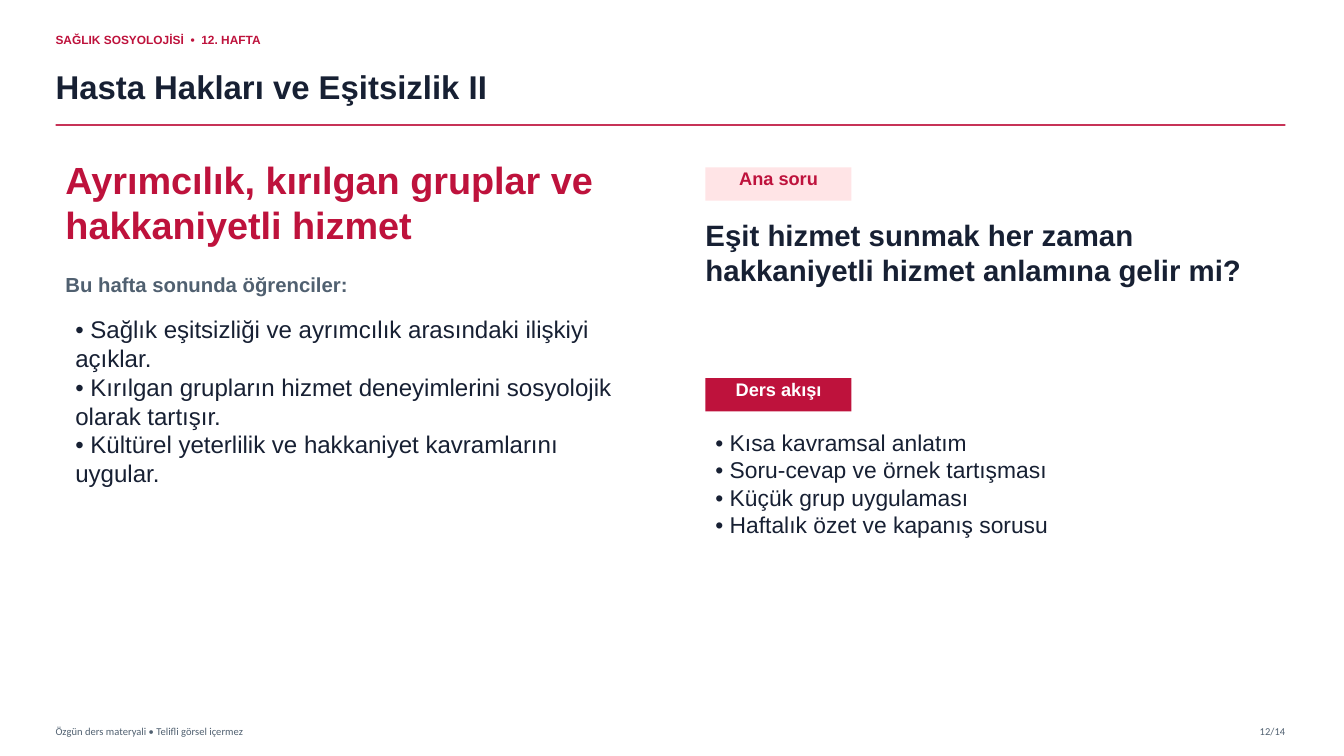
"""Builds the opening slide of week 12 of the health sociology course."""
from lxml import etree
from pptx import Presentation, util as u
from pptx.dml import color
from pptx.enum import shapes, text
from pptx.oxml import ns

CRIMSON, ROSE, NAVY, SLATE, WHITE = "BE123C", "FFE4E6", "172033", "506070", "FFFFFF"
ALIGN, ANCHOR = text.PP_ALIGN, text.MSO_ANCHOR


def rgb(code):
    return color.RGBColor.from_string(code)


class Lesson:
    def __init__(self, width, height):
        self.deck = Presentation()
        self.deck.slide_width, self.deck.slide_height = u.Cm(width), u.Cm(height)
        self.page = self.deck.slides.add_slide(self.deck.slide_layouts[6])
        self.font = "Arial"

    def set_lines(self, box, lines, size, ink, bold=False, font=None,
                  align=ALIGN.LEFT, anchor=ANCHOR.TOP):
        frame = box.text_frame
        frame_format = {"word_wrap": True, "vertical_anchor": anchor, "margin_left": 0,
                        "margin_top": 0, "margin_right": 0, "margin_bottom": 0}
        for name, value in frame_format.items():
            setattr(frame, name, value)
        span_format = {"name": font or self.font, "size": u.Pt(size), "bold": bold}
        for index, line in enumerate(lines):
            para = frame.add_paragraph() if index else frame.paragraphs[0]
            para.alignment = align
            span = para.add_run()
            span.text = line
            for name, value in span_format.items():
                setattr(span.font, name, value)
            span.font.color.rgb = rgb(ink)

    def label(self, place, lines, size, ink, **style):
        box = self.page.shapes.add_textbox(*map(u.Cm, place))
        self.set_lines(box, lines, size, ink, **style)

    def tag(self, left, top, caption, fill, ink):
        box = self.page.shapes.add_shape(
            shapes.MSO_SHAPE.RECTANGLE, *map(u.Cm, (left, top, 3.68, 0.84)))
        box.shadow.inherit = False
        box.fill.solid()
        box.fill.fore_color.rgb = rgb(fill)
        box.line.fill.background()
        self.set_lines(box, [caption], 13, ink, bold=True, align=ALIGN.CENTER)

    def rule(self, left, right, top, ink, width, opacity):
        line = self.page.shapes.add_connector(
            shapes.MSO_CONNECTOR.STRAIGHT, *map(u.Cm, (left, top, right, top)))
        line.line.width = u.Pt(width)
        line.line.color.rgb = rgb(ink)
        properties = line._element.spPr
        shade = properties.find(".//" + ns.qn("a:srgbClr"))
        etree.SubElement(shade, ns.qn("a:alpha"), val=str(opacity * 1000))
        etree.SubElement(properties, ns.qn("a:effectLst"))


def main():
    lesson = Lesson(33.87, 19.05)
    margin, edge, column = 1.4, 32.39, 17.78
    middle = {"anchor": ANCHOR.MIDDLE}
    footer = {"font": "Calibri", **middle}

    lesson.label((margin, 0.64, 9.14, 0.71), ["SAĞLIK SOSYOLOJİSİ  •  12. HAFTA"],
                 8.5, CRIMSON, bold=True, **middle)
    lesson.label((margin, 1.47, 30.35, 1.4), ["Hasta Hakları ve Eşitsizlik II"],
                 23.5, NAVY, bold=True, **middle)
    lesson.rule(margin, edge, 3.15, CRIMSON, 1.2, 85)
    lesson.label((margin, 18.14, 15.24, 0.56),
                 ["Özgün ders materyali • Telifli görsel içermez"], 7.5, SLATE, **footer)
    lesson.label((edge - 1.65, 18.14, 1.65, 0.56), ["12/14"], 7.5, SLATE,
                 align=ALIGN.RIGHT, **footer)

    lesson.label((1.65, 3.94, 13.46, 2.41),
                 ["Ayrımcılık, kırılgan gruplar ve hakkaniyetli hizmet"], 27, CRIMSON, bold=True)
    lesson.label((1.65, 6.86, 12.45, 0.76), ["Bu hafta sonunda öğrenciler:"],
                 14.5, SLATE, bold=True)
    lesson.label((1.9, 7.92, 13.97, 5.08),
                 ["• Sağlık eşitsizliği ve ayrımcılık arasındaki ilişkiyi açıklar.",
                  "• Kırılgan grupların hizmet deneyimlerini sosyolojik olarak tartışır.",
                  "• Kültürel yeterlilik ve hakkaniyet kavramlarını uygular."], 17.2, NAVY)

    lesson.tag(column, 4.22, "Ana soru", ROSE, CRIMSON)
    lesson.label((column, 5.46, 13.59, 2.79),
                 ["Eşit hizmet sunmak her zaman hakkaniyetli hizmet anlamına gelir mi?"],
                 21, NAVY, bold=True)
    lesson.tag(column, 9.53, "Ders akışı", CRIMSON, WHITE)
    lesson.label((column + 0.25, 10.8, 13.59, 3.94),
                 ["• Kısa kavramsal anlatım", "• Soru-cevap ve örnek tartışması",
                  "• Küçük grup uygulaması", "• Haftalık özet ve kapanış sorusu"], 16.3, NAVY)

    lesson.deck.save("out.pptx")


if __name__ == "__main__":
    main()
